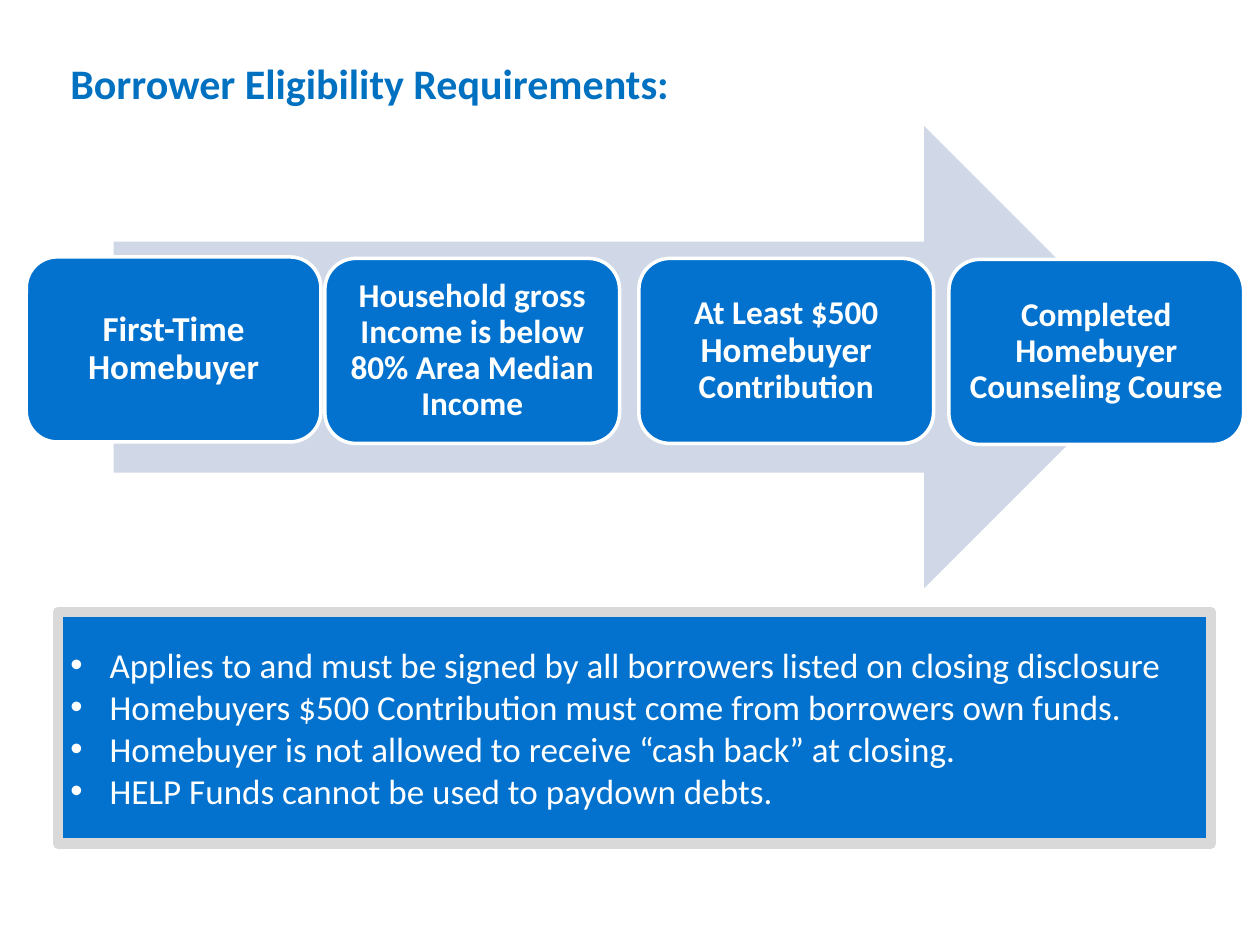
import pptx
import pptx.dml.color
import pptx.enum.shapes
import pptx.enum.text
import pptx.oxml.ns
import pptx.util
from lxml import etree

Cm, Pt = pptx.util.Cm, pptx.util.Pt
SHAPES = pptx.enum.shapes.MSO_SHAPE
ALIGN = pptx.enum.text.PP_ALIGN
MIDDLE = pptx.enum.text.MSO_ANCHOR.MIDDLE
COLORS = {"title": "0070C0", "arrow": "D0D8E8", "panel": "0372CE",
          "white": "FFFFFF", "border": "D9D9D9"}


def add_panel(kind, left, top, width, height, fill, line=None, line_width=0):
    """Add a flat filled shape, measured in centimetres, with middle-anchored text."""
    shape = slide.shapes.add_shape(kind, Cm(left), Cm(top), Cm(width), Cm(height))
    shape.shadow.inherit = False
    shape.fill.solid()
    shape.fill.fore_color.rgb = pptx.dml.color.RGBColor.from_string(COLORS[fill])
    if line:
        shape.line.color.rgb = pptx.dml.color.RGBColor.from_string(COLORS[line])
        shape.line.width = Pt(line_width)
    else:
        shape.line.fill.background()
    shape.text_frame.word_wrap = True
    shape.text_frame.vertical_anchor = MIDDLE
    return shape


def add_run(paragraph, text, size, color="white", bold=False):
    run = paragraph.add_run()
    run.text = text
    run.font.name = "Calibri"
    run.font.size = Pt(size)
    run.font.bold = bold
    run.font.color.rgb = pptx.dml.color.RGBColor.from_string(COLORS[color])


presentation = pptx.Presentation()
presentation.slide_width, presentation.slide_height = Cm(25.4), Cm(19.05)
slide = presentation.slides.add_slide(presentation.slide_layouts[6])

# Title
title = slide.shapes.add_textbox(Cm(1.17), Cm(1.04), Cm(20.75), Cm(1.27))
title.text_frame.word_wrap = True
title.text_frame.vertical_anchor = MIDDLE
add_run(title.text_frame.paragraphs[0], "Borrower Eligibility Requirements:", 24, "title", True)

# Requirement cards on an arrow
add_panel(SHAPES.RIGHT_ARROW, 2.29, 2.54, 21, 9.32, "arrow")
cards = [
    (0.53, 5.18, [("First-Time Homebuyer", 20)]),
    (6.55, 5.21, [("Household gross Income is below 80% Area Median Income", 19)]),
    (12.88, 5.21, [("At Least $500 ", 19), ("Homebuyer", 20), (" Contribution", 19)]),
    (19.13, 5.23, [("Completed Homebuyer Counseling Course", 19)]),
]
for left, top, runs in cards:
    card = add_panel(SHAPES.ROUNDED_RECTANGLE, left, top, 5.94, 3.73, "panel", "white", 2)
    frame = card.text_frame
    frame.margin_left = frame.margin_right = frame.margin_top = frame.margin_bottom = Cm(0.2)
    paragraph = frame.paragraphs[0]
    paragraph.alignment = ALIGN.CENTER
    paragraph.line_spacing = 0.9
    for text, size in runs:
        add_run(paragraph, text, size, bold=True)

# Conditions
conditions = [
    "Applies to and must be signed by all borrowers listed on closing disclosure",
    "Homebuyers $500 Contribution must come from borrowers own funds.",
    "Homebuyer is not allowed to receive “cash back” at closing.",
    "HELP Funds cannot be used to paydown debts.",
]
box = add_panel(SHAPES.RECTANGLE, 1.17, 12.34, 23.24, 4.67, "panel", "border", 6)
for index, text in enumerate(conditions):
    frame = box.text_frame
    paragraph = frame.add_paragraph() if index else frame.paragraphs[0]
    paragraph.alignment = ALIGN.LEFT
    properties = paragraph._p.get_or_add_pPr()
    properties.set("marL", str(Cm(0.79)))
    properties.set("indent", str(-Cm(0.79)))
    etree.SubElement(properties, pptx.oxml.ns.qn("a:buFont"), typeface="Arial")
    etree.SubElement(properties, pptx.oxml.ns.qn("a:buChar"), char="•")
    add_run(paragraph, text, 20)

presentation.save("out.pptx")
